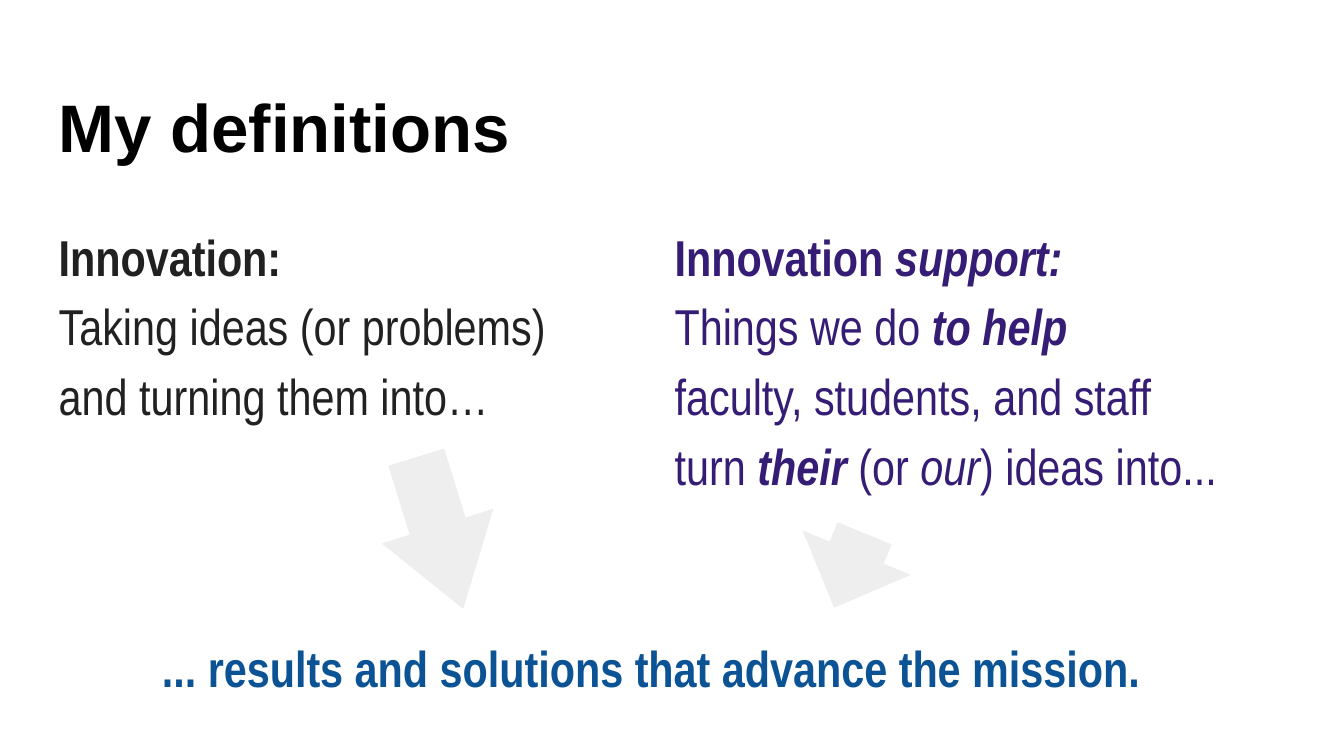
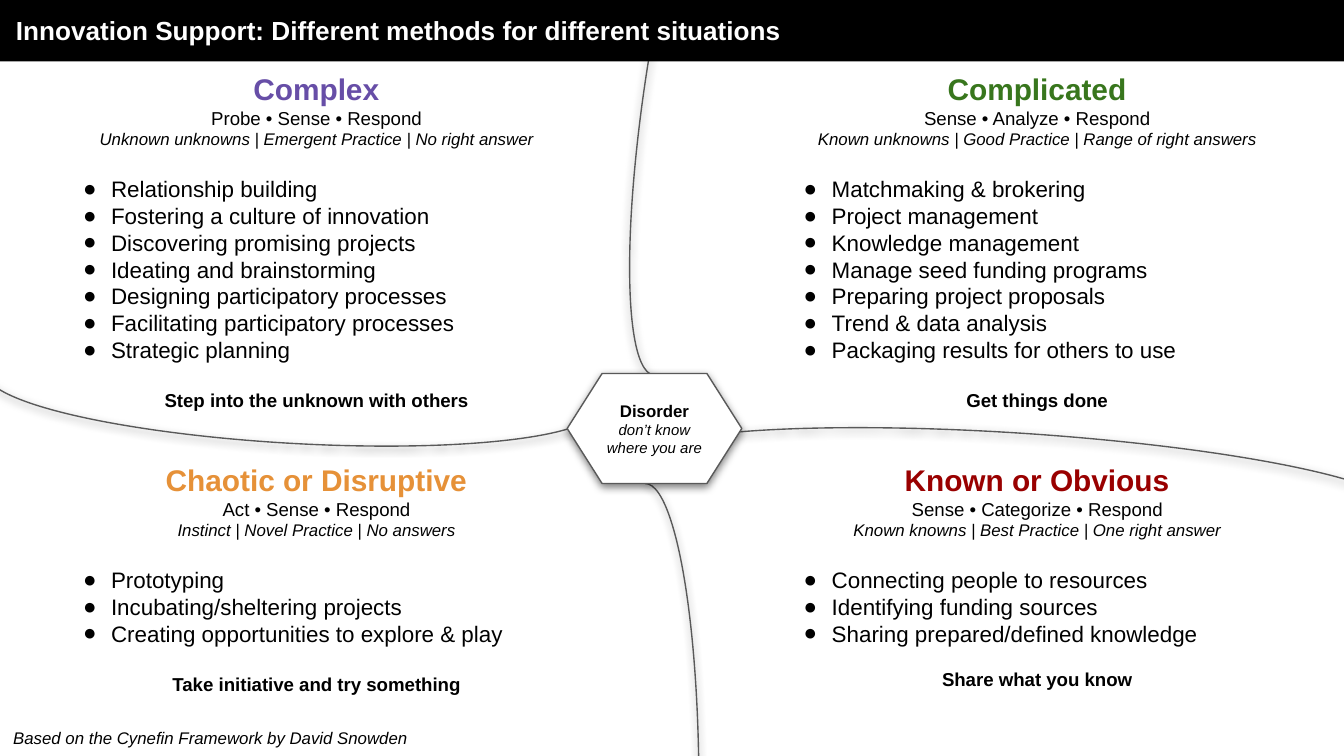
"""Builds two slides on innovation support: definitions and methods by situation."""
from lxml.etree import SubElement as Sub
from pptx import Presentation
from pptx.dml.color import RGBColor as Rgb
from pptx.enum.shapes import MSO_SHAPE as Kind
from pptx.enum.text import MSO_ANCHOR as Anchor, PP_ALIGN as Align
from pptx.oxml.ns import qn
from pptx.util import Cm, Pt

HUE = {
    "black": "000000", "white": "FFFFFF", "ink": "212121", "grape": "351C75",
    "blue": "0B5394", "pale": "EEEEEE", "line": "595959", "violet": "674EA7",
    "green": "38761D", "orange": "E69138", "red": "990000",
}
MID = {"alignment": Align.CENTER}
BOLD = {"bold": True}
SLANT = {"italic": True}
BOTH = BOLD | SLANT


def write(shape, rows, hue="black", face="Arial", inset=0.25, anchor=Anchor.TOP):
    """Fill a shape with rows of (paragraph format, [(text, font format)])."""
    frame = shape.text_frame
    pad = Cm(inset)
    look = {"word_wrap": True, "vertical_anchor": anchor, "margin_left": pad,
            "margin_right": pad, "margin_top": pad, "margin_bottom": pad}
    for key, val in look.items():
        setattr(frame, key, val)
    for num, (form, runs) in enumerate(rows):
        par = frame.add_paragraph() if num else frame.paragraphs[0]
        for key, val in ({"alignment": Align.LEFT} | form).items():
            setattr(par, key, val)
        for text, font in runs:
            run = par.add_run()
            run.text = text
            run.font.color.rgb = Rgb.from_string(HUE[hue])
            for key, val in ({"name": face, "bold": False, "italic": False} | font).items():
                setattr(run.font, key, val)
    return frame


def draw(slide, kind, place, fill=None, edge=None, turn=0, bends=()):
    """Add a preset shape; an edged shape also casts a soft shadow."""
    shape = slide.shapes.add_shape(kind, *map(Cm, place))
    shape.rotation = turn
    for num, bend in enumerate(bends):
        shape.adjustments[num] = bend
    shape.shadow.inherit = False
    if fill:
        shape.fill.solid()
        shape.fill.fore_color.rgb = Rgb.from_string(HUE[fill])
    else:
        shape.fill.background()
    if edge:
        shape.line.color.rgb = Rgb.from_string(HUE[edge])
        shape.line.width = Pt(0.75)
        glow = Sub(shape.element.spPr.find(qn("a:effectLst")), qn("a:outerShdw"),
                   blurRad=str(Pt(4.5)), dist=str(Pt(1.5)), dir="5400000",
                   algn="bl", rotWithShape="0")
        tint = Sub(glow, qn("a:srgbClr"), val=HUE["black"])
        Sub(tint, qn("a:alpha"), val="50000")
    else:
        shape.line.fill.background()
    return shape


deck = Presentation()
deck.slide_width, deck.slide_height = Cm(25.4), Cm(14.29)
blank = deck.slide_layouts[6]

page = deck.slides.add_slide(blank)
title = page.shapes.add_textbox(*map(Cm, (0.86, 1.24, 23.67, 1.6)))
frame = write(title, [({}, [("My definitions", BOLD | {"size": Pt(36)})])])
frame.margin_top = Cm(0.38)

left = [
    [("Innovation:", BOLD)],
    [("Taking ideas (or problems)", {})],
    [("and turning them into…", {})],
]
right = [
    [("Innovation ", BOLD), ("support:", BOTH)],
    [("Things we do ", {}), ("to help", BOTH)],
    [("faculty, students, and staff", {})],
    [("turn ", {}), ("their ", BOTH), ("(or ", {}), ("our", SLANT), (") ideas into...", {})],
]
end = [[("... results and solutions that advance the mission.", BOLD)]]
lead = [{"line_spacing": 1.5}] + [{"line_spacing": 1.15}] * 3
for place, hue, forms, lines in [
    ((0.86, 3.45, 11.63, 8.81), "ink", lead, left),
    ((12.5, 3.45, 12.22, 8.81), "grape", lead, right),
    ((0.86, 11.79, 22.89, 1.98), "blue", [MID], end),
]:
    box = page.shapes.add_textbox(*map(Cm, place))
    rows = [(form, [(text, font | {"size": Pt(27)}) for text, font in runs])
            for form, runs in zip(forms, lines)]
    write(box, rows, hue, "Arial Narrow")

for place, turn in [((6.81, 8.97, 3, 2.21), 72.8), ((15.29, 9.68, 1.52, 2.21), 112.3)]:
    draw(page, Kind.RIGHT_ARROW, place, "pale", turn=turn, bends=(0.5, 0.74))

page = deck.slides.add_slide(blank)
for place, turn, bends in [
    ((11.18, 9.14, 2.03, 11.43), 0, (162, 32.75)),
    ((4.52, 1.57, 2.01, 11.61), 93.3, (164.29, 54.41)),
    ((18.21, 1.9, 2.03, 14.6), 273.7, (166.05, 52.56)),
    ((12.22, -4.27, 2.03, 11.43), 188.9, (162, 32.75)),
]:
    draw(page, Kind.ARC, place, edge="line", turn=turn, bends=bends)

hub = draw(page, Kind.FLOWCHART_PREPARATION, (10.72, 7.06, 3.3, 2.08), "white", "line")
write(hub, [
    (MID, [("Disorder", BOLD | {"size": Pt(9)})]),
    (MID, [("don’t know where you are", SLANT | {"size": Pt(8)})]),
], inset=0, anchor=Anchor.MIDDLE)

quads = [
    ("Complex", "violet", ("Probe", "Sense", "Respond"),
     ("Unknown unknowns", "Emergent Practice", "No right answer"),
     ("Relationship building", "Fostering a culture of innovation",
      "Discovering promising projects", "Ideating and brainstorming",
      "Designing participatory processes", "Facilitating participatory processes",
      "Strategic planning"),
     "Step into the unknown with others", 13.8),
    ("Complicated", "green", ("Sense", "Analyze", "Respond"),
     ("Known unknowns", "Good Practice", "Range of right answers"),
     ("Matchmaking & brokering", "Project management", "Knowledge management",
      "Manage seed funding programs", "Preparing project proposals",
      "Trend & data analysis", "Packaging results for others to use"),
     "Get things done", 13.8),
    ("Chaotic or Disruptive", "orange", ("Act", "Sense", "Respond"),
     ("Instinct", "Novel Practice", "No answers"),
     ("Prototyping", "Incubating/sheltering projects",
      "Creating opportunities to explore & play"),
     "Take initiative and try something", 13.8),
    ("Known or Obvious", "red", ("Sense", "Categorize", "Respond"),
     ("Known knowns", "Best Practice", "One right answer"),
     ("Connecting people to resources", "Identifying funding sources",
      "Sharing prepared/defined knowledge"),
     "Share what you know", 11.5),
]
for num, (name, hue, steps, traits, tasks, motto, gap) in enumerate(quads):
    row, col = divmod(num, 2)
    place = (0.58 + 13.62 * col, 1.09 + 7.39 * row, 10.8, 6.45)
    box = page.shapes.add_textbox(*map(Cm, place))
    rows = [
        (MID, [(name, BOLD | {"size": Pt(16)})]),
        (MID, [(" • ".join(steps), {"size": Pt(10)})]),
        (MID, [(" | ".join(traits), SLANT | {"size": Pt(9)})]),
    ]
    rows += [({"space_before": Pt(0 if spot else 13.8)}, [(task, {"size": Pt(12)})])
             for spot, task in enumerate(tasks)]
    rows.append((MID | {"space_before": Pt(gap)}, [(motto, BOLD | {"size": Pt(10)})]))
    pars = write(box, rows).paragraphs
    pars[0].runs[0].font.color.rgb = Rgb.from_string(HUE[hue])
    for par in pars[3:-1]:
        prop = par._p.get_or_add_pPr()
        prop.set("marL", str(Cm(1.27)))
        prop.set("indent", str(Cm(-0.53)))
        Sub(Sub(prop, qn("a:buClr")), qn("a:srgbClr"), val=HUE["black"])
        Sub(prop, qn("a:buFont"), typeface="Arial")
        Sub(prop, qn("a:buChar"), char="●")

band = draw(page, Kind.RECTANGLE, (-0.08, -0.03, 25.5, 1.19), "black")
head = "Innovation Support: Different methods for different situations"
frame = write(band, [({}, [(head, BOLD | {"size": Pt(14)})])], "white", anchor=Anchor.MIDDLE)
frame.margin_left = Cm(0.38)

note = page.shapes.add_textbox(*map(Cm, (0, 13.56, 9.98, 0.89)))
credit = "Based on the Cynefin Framework by David Snowden"
write(note, [({}, [(credit, SLANT | {"size": Pt(9)})])])

deck.save("out.pptx")
